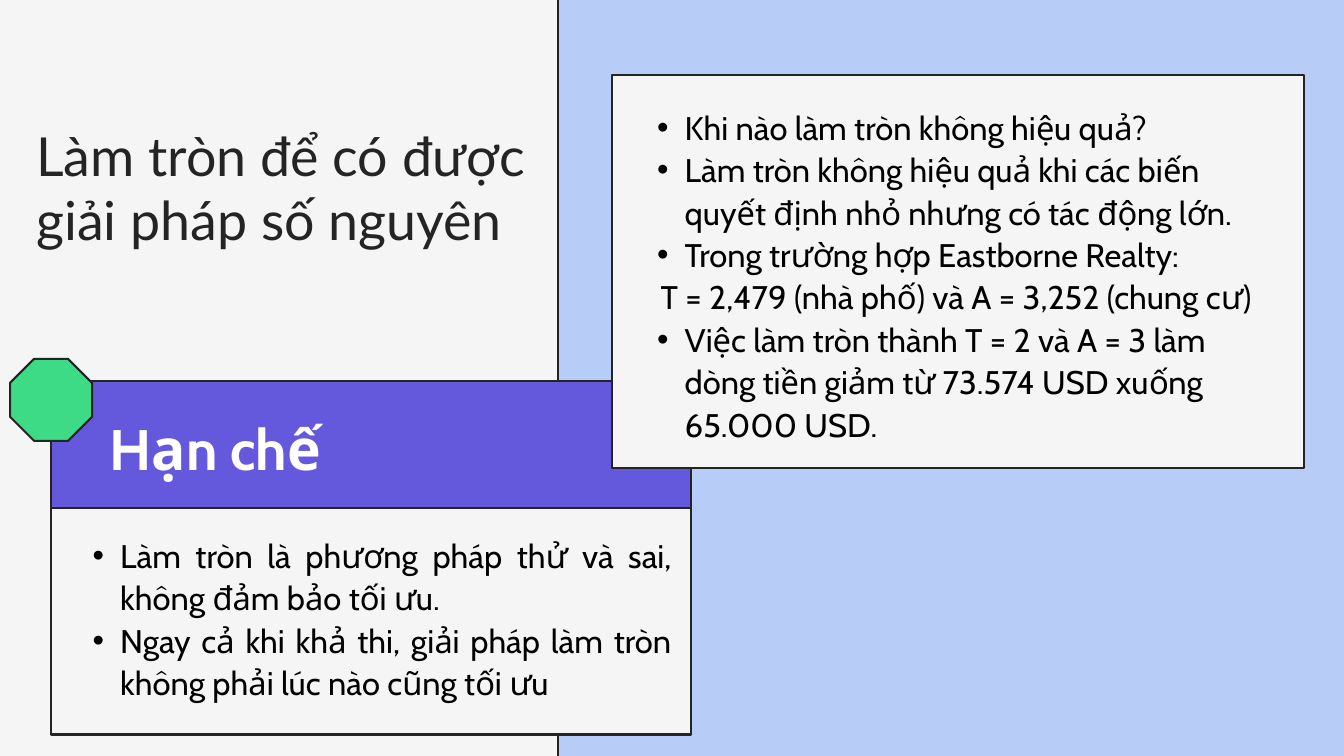
from dataclasses import dataclass

from lxml import etree
from pptx import Presentation
from pptx.dml.color import RGBColor
from pptx.enum.shapes import MSO_SHAPE
from pptx.enum.text import PP_ALIGN
from pptx.oxml.ns import qn
from pptx.util import Inches, Pt

RECTANGLE = MSO_SHAPE.RECTANGLE
OCTAGON = MSO_SHAPE.OCTAGON
LEFT, CENTER, JUSTIFY = PP_ALIGN.LEFT, PP_ALIGN.CENTER, PP_ALIGN.JUSTIFY


@dataclass(frozen=True)
class Style:
    font: str
    size: float
    line_spacing: float
    color: str
    bold: bool = False


@dataclass(frozen=True)
class Theme:
    paper: str = "F5F5F5"
    sky: str = "B7CCF6"
    violet: str = "6458DD"
    green: str = "3EDB86"
    ink: str = "242424"
    outline: float = 2.25
    title: Style = Style("Lato", 57.6, 69.2, "242424")
    heading: Style = Style("Cabin", 61.1, 79.5, "FFFFFF", True)
    body: Style = Style("Cabin", 35, 45.5, "000000")


THEME = Theme()
BULLET_MARGIN = Inches(0.83)
BULLET_HANGING = Inches(-0.41)

LIMITATIONS = [
    "Làm tròn là phương pháp thử và sai, không đảm bảo tối ưu.",
    "Ngay cả khi khả thi, giải pháp làm tròn không phải lúc nào cũng tối ưu",
]
FAILURE_INTRO = [
    "Khi nào làm tròn không hiệu quả?",
    "Làm tròn không hiệu quả khi các biến quyết định nhỏ nhưng có tác động lớn.",
    "Trong trường hợp Eastborne Realty:",
]
FRACTIONAL_SOLUTION = "T = 2,479 (nhà phố) và A = 3,252 (chung cư)"
ROUNDING_EFFECT = (
    "Việc làm tròn thành T = 2 và A = 3 làm dòng tiền giảm "
    "từ 73.574 USD xuống 65.000 USD."
)


def add_panel(slide, box, fill, kind=RECTANGLE):
    """Add an outlined shape; box is left, top, width, height in inches."""
    shape = slide.shapes.add_shape(kind, *map(Inches, box))
    shape.shadow.inherit = False
    shape.fill.solid()
    shape.fill.fore_color.rgb = RGBColor.from_string(fill)
    shape.line.color.rgb = RGBColor.from_string(THEME.ink)
    shape.line.width = Pt(THEME.outline)


def add_bullet(paragraph):
    properties = paragraph._p.get_or_add_pPr()
    properties.set("marL", str(BULLET_MARGIN))
    properties.set("indent", str(BULLET_HANGING))
    etree.SubElement(properties, qn("a:buFont")).set("typeface", "Arial")
    etree.SubElement(properties, qn("a:buChar")).set("char", "•")


def add_text(slide, box, style, items):
    """Add a text box; items are (text, alignment, bulleted) tuples."""
    text_box = slide.shapes.add_textbox(*map(Inches, box))
    frame = text_box.text_frame
    frame.word_wrap = True
    frame.margin_left = frame.margin_right = 0
    frame.margin_top = frame.margin_bottom = 0
    frame.text = "\n".join(text for text, _, _ in items)
    for paragraph, (_, alignment, bulleted) in zip(frame.paragraphs, items):
        paragraph.alignment = alignment
        paragraph.line_spacing = Pt(style.line_spacing)
        if bulleted:
            add_bullet(paragraph)
        for run in paragraph.runs:
            run.font.name = style.font
            run.font.size = Pt(style.size)
            run.font.bold = style.bold
            run.font.color.rgb = RGBColor.from_string(style.color)


def bullets(texts, alignment=LEFT):
    return [(text, alignment, True) for text in texts]


def main():
    presentation = Presentation()
    presentation.slide_width = Inches(20)
    presentation.slide_height = Inches(11.25)
    slide = presentation.slides.add_slide(presentation.slide_layouts[6])
    slide.background.fill.solid()
    slide.background.fill.fore_color.rgb = RGBColor.from_string(THEME.paper)

    add_panel(slide, (8.31, -0.17, 11.88, 11.69), THEME.sky)
    add_panel(slide, (0.76, 7.52, 9.53, 3.41), THEME.paper)
    add_panel(slide, (0.76, 5.67, 9.53, 1.89), THEME.violet)
    add_text(slide, (1.63, 6.07, 7.73, 1.05), THEME.heading,
             [("Hạn chế", LEFT, False)])
    add_panel(slide, (9.11, 1.12, 10.29, 5.85), THEME.paper)
    add_panel(slide, (0.15, 5.34, 1.22, 1.22), THEME.green, OCTAGON)

    add_text(slide, (0.54, 1.82, 8.11, 2.88), THEME.title,
             [("Làm tròn để có được giải pháp số nguyên", LEFT, False)])
    add_text(slide, (0.96, 7.92, 9.04, 2.49), THEME.body,
             bullets(LIMITATIONS, JUSTIFY))
    add_text(slide, (9.36, 1.55, 9.74, 4.99), THEME.body,
             bullets(FAILURE_INTRO)
             + [(FRACTIONAL_SOLUTION, CENTER, False)]
             + bullets([ROUNDING_EFFECT]))

    presentation.save("out.pptx")


if __name__ == "__main__":
    main()
